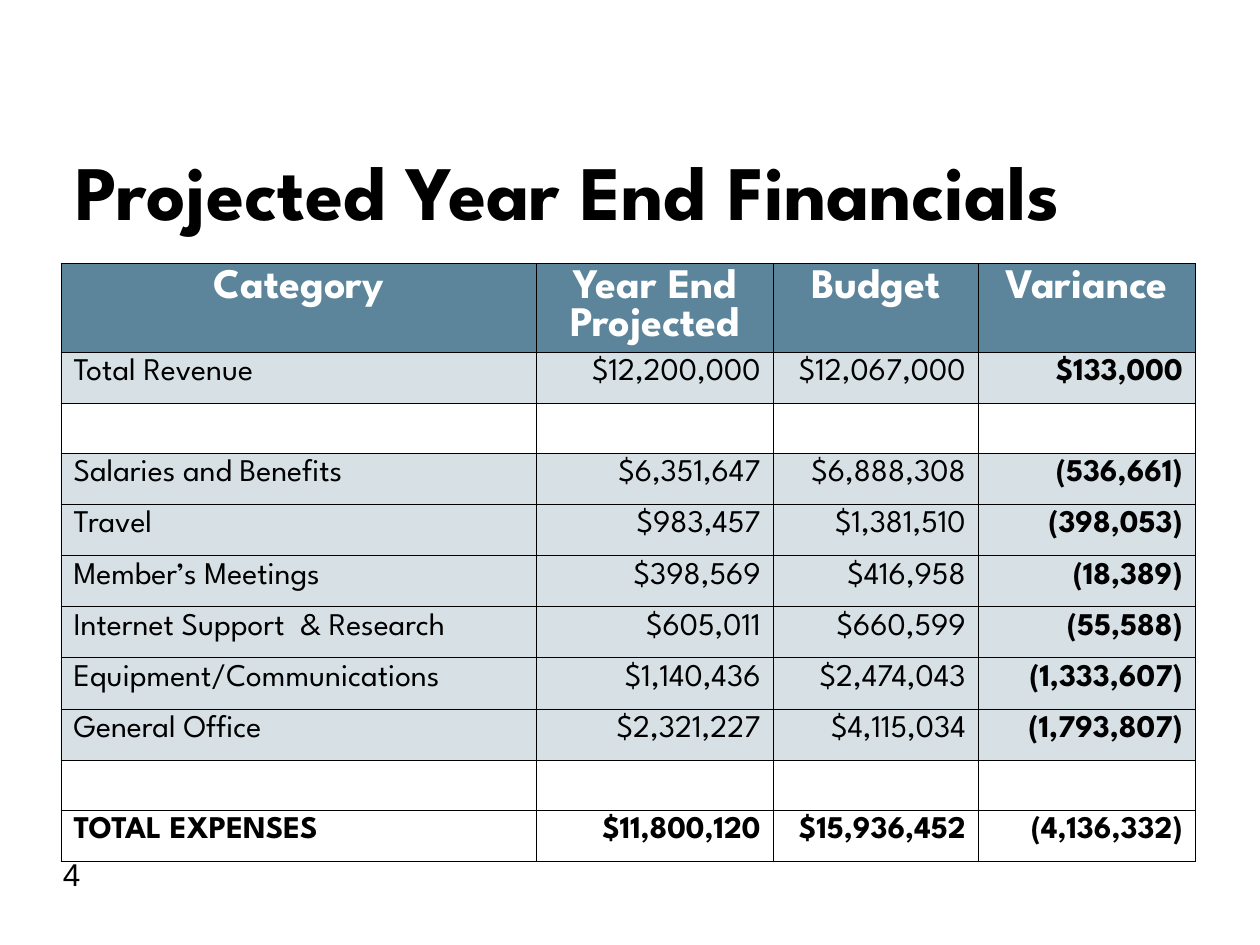
from dataclasses import dataclass

from lxml.etree import SubElement
from pptx import Presentation
from pptx.dml.color import RGBColor
from pptx.enum.text import MSO_ANCHOR, PP_ALIGN
from pptx.oxml.ns import qn
from pptx.util import Pt


@dataclass(frozen=True)
class Theme:
    accent: str = "5C859B"
    white: str = "FFFFFF"
    black: str = "000000"
    font: str = "League Spartan"
    number_font: str = "Arial"
    title_size: int = 44
    header_size: int = 24
    body_size: int = 18
    line_height: float = 0.9
    tint: int = 25
    border: float = 0.5


HEADER = ("Category", "Year End Projected", "Budget", "Variance")
BLANK = ("",) * len(HEADER)
ROWS = [
    ("Total Revenue", "$12,200,000", "$12,067,000", "$133,000"),
    BLANK,
    ("Salaries and Benefits", "$6,351,647", "$6,888,308", "(536,661)"),
    ("Travel", "$983,457", "$1,381,510", "(398,053)"),
    ("Member’s Meetings", "$398,569", "$416,958", "(18,389)"),
    ("Internet Support  & Research", "$605,011", "$660,599", "(55,588)"),
    ("Equipment/Communications", "$1,140,436", "$2,474,043", "(1,333,607)"),
    ("General Office", "$2,321,227", "$4,115,034", "(1,793,807)"),
    BLANK,
    ("TOTAL EXPENSES", "$11,800,120", "$15,936,452", "(4,136,332)"),
]
COLUMN_WIDTHS = (272, 135.1, 117.2, 124)
HEADER_HEIGHT, ROW_HEIGHT, BLANK_HEIGHT = 50.5, 29.22, 23.6


class SlideBuilder:
    def __init__(self, slide, theme):
        self.slide = slide
        self.theme = theme

    def format_text(self, tf, size, color, bold=False, align=PP_ALIGN.LEFT, font=None):
        for p in tf.paragraphs:
            p.alignment = align
            for r in p.runs:
                r.font.name = font or self.theme.font
                r.font.size = Pt(size)
                r.font.bold = bold
                r.font.color.rgb = RGBColor.from_string(color)

    def title(self, text, left, top, width, height):
        sp = self.slide.shapes.title
        sp.left, sp.top, sp.width, sp.height = map(Pt, (left, top, width, height))
        tf = sp.text_frame
        tf.text = text
        tf.vertical_anchor = MSO_ANCHOR.MIDDLE
        self.format_text(tf, self.theme.title_size, self.theme.black, bold=True)

    def page_number(self, text, left, top, width, height):
        sp = self.slide.shapes.add_textbox(*map(Pt, (left, top, width, height)))
        tf = sp.text_frame
        tf.text = text
        self.format_text(tf, self.theme.body_size, self.theme.black,
                         font=self.theme.number_font)

    def table(self, header, rows, left, top):
        heights = [HEADER_HEIGHT] + [ROW_HEIGHT if any(row) else BLANK_HEIGHT for row in rows]
        frame = self.slide.shapes.add_table(
            len(heights), len(header), Pt(left), Pt(top),
            Pt(sum(COLUMN_WIDTHS)), Pt(sum(heights)))
        table = frame.table
        for column, width in zip(table.columns, COLUMN_WIDTHS):
            column.width = Pt(width)
        for row, height in zip(table.rows, heights):
            row.height = Pt(height)
        for i, row in enumerate([header, *rows]):
            is_total = i == len(rows)
            for j, text in enumerate(row):
                cell = table.cell(i, j)
                self.borders(cell)
                if i == 0:
                    self.header_cell(cell, text)
                elif text:
                    self.body_cell(cell, text, is_total, j)
                else:
                    self.blank_cell(cell)

    def header_cell(self, cell, text):
        cell.text = text
        self.fill(cell, self.theme.accent)
        self.format_text(cell.text_frame, self.theme.header_size, self.theme.white,
                         bold=True, align=PP_ALIGN.CENTER)
        self.fix_line_height(cell, self.theme.header_size)

    def body_cell(self, cell, text, is_total, column):
        cell.text = text
        if is_total:
            self.fill(cell, self.theme.white)
        else:
            self.fill(cell, self.theme.accent, self.theme.tint)
        bold = is_total or column == len(HEADER) - 1
        align = PP_ALIGN.RIGHT if column else PP_ALIGN.LEFT
        self.format_text(cell.text_frame, self.theme.body_size, self.theme.black, bold, align)

    def blank_cell(self, cell):
        self.fill(cell, self.theme.white)
        self.fix_line_height(cell, self.theme.body_size)
        p = cell.text_frame.paragraphs[0]
        end = SubElement(p._p, qn("a:endParaRPr"), sz=str(self.theme.body_size * 100))
        SubElement(end, qn("a:latin"), typeface=self.theme.font)

    def fix_line_height(self, cell, size):
        """Set an exact line height, so that the row does not grow."""
        for p in cell.text_frame.paragraphs:
            p.line_spacing = Pt(size * self.theme.line_height)

    def fill(self, cell, color, opacity=100):
        cell.fill.solid()
        cell.fill.fore_color.rgb = RGBColor.from_string(color)
        if opacity < 100:
            srgb = cell._tc.tcPr.find(qn("a:solidFill")).find(qn("a:srgbClr"))
            SubElement(srgb, qn("a:alpha"), val=str(opacity * 1000))

    def borders(self, cell):
        """Draw all four edges; call before fill, as the schema wants lines first."""
        tcPr = cell._tc.get_or_add_tcPr()
        for side in ("lnL", "lnR", "lnT", "lnB"):
            ln = SubElement(tcPr, qn(f"a:{side}"), w=str(Pt(self.theme.border)))
            solid = SubElement(ln, qn("a:solidFill"))
            SubElement(solid, qn("a:srgbClr"), val=self.theme.black)


def main():
    prs = Presentation()
    prs.slide_width, prs.slide_height = Pt(720), Pt(540)
    slide = prs.slides.add_slide(prs.slide_layouts[5])
    builder = SlideBuilder(slide, Theme())
    builder.page_number("4", 28.8, 485.3, 36.7, 28.8)
    builder.title("Projected Year End Financials", 36, 71, 648, 74.9)
    builder.table(HEADER, ROWS, 34.8, 150.6)
    prs.save("out.pptx")


if __name__ == "__main__":
    main()
